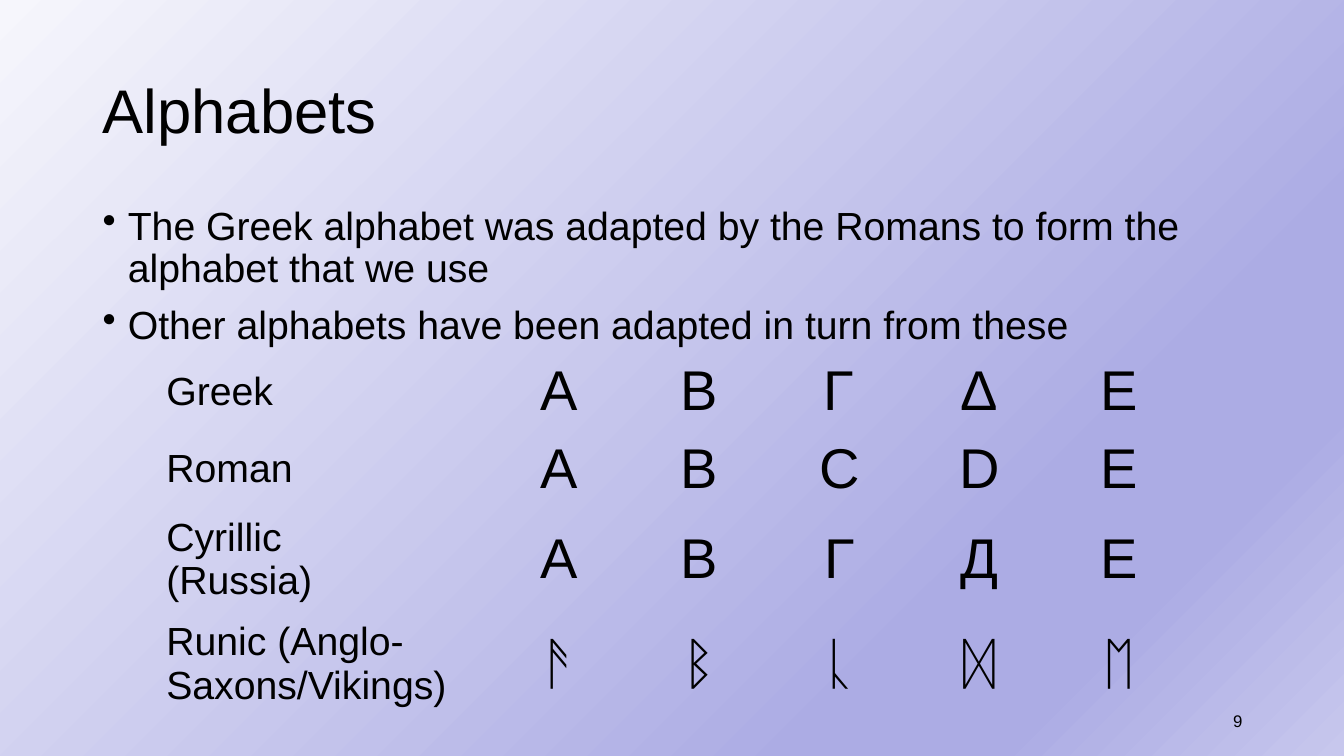
from pptx import Presentation
from pptx.dml.color import RGBColor
from pptx.enum.text import MSO_ANCHOR, PP_ALIGN
from pptx.oxml import parse_xml
from pptx.oxml.ns import nsdecls, qn
from pptx.util import Inches, Pt

MIDDLE, TOP = MSO_ANCHOR.MIDDLE, MSO_ANCHOR.TOP
LEFT, CENTER, RIGHT = PP_ALIGN.LEFT, PP_ALIGN.CENTER, PP_ALIGN.RIGHT
BLACK = RGBColor(0x00, 0x00, 0x00)
PALE = RGBColor(0xF6, 0xF6, 0xFC)
LAVENDER = RGBColor(0xAC, 0xAC, 0xE4)
LILAC = RGBColor(0xC7, 0xC7, 0xED)
BACKGROUND_STOPS = [(0, PALE), (74, LAVENDER), (83, LAVENDER), (100, LILAC)]
FONT = "Arial"
PLAIN_TABLE_STYLE = "{2D5ABB26-0587-4C30-8999-92F81FD0307C}"

POINTS = [
    "The Greek alphabet was adapted by the Romans to form the alphabet that we use",
    "Other alphabets have been adapted in turn from these",
]
ALPHABETS = [
    ("Greek", "ΑΒΓΔΕ"),
    ("Roman", "ABCDE"),
    ("Cyrillic\n(Russia)", "АВГДЕ"),
    ("Runic (Anglo-\nSaxons/Vikings)", "ᚫᛒᚳᛞᛖ"),
]


def paint_background(page):
    fill = page.background.fill
    fill.gradient()
    fill.gradient_angle = 315
    stops = next(page.element.iter(qn("a:gsLst")))
    for stop in list(stops):
        stops.remove(stop)
    for percent, color in BACKGROUND_STOPS:
        stops.append(parse_xml(
            f'<a:gs {nsdecls("a")} pos="{percent * 1000}">'
            f'<a:srgbClr val="{color}"/></a:gs>'))


def write(para, text, size, align=LEFT):
    para.text = text
    para.alignment = align
    para.font.name = FONT
    para.font.size = Pt(size)
    para.font.color.rgb = BLACK


def add_bullet(para):
    properties = para._p.get_or_add_pPr()
    properties.set("marL", str(Inches(0.25)))
    properties.set("indent", str(Inches(-0.25)))
    bullet = parse_xml(f'<a:buChar {nsdecls("a")} char="•"/>')
    properties.insert_element_before(bullet, "a:tabLst", "a:defRPr", "a:extLst")


def add_text(page, left, top, width, height, lines, size,
             anchor=MIDDLE, align=LEFT, spacing=None, bulleted=False):
    box = page.shapes.add_textbox(
        Inches(left), Inches(top), Inches(width), Inches(height))
    frame = box.text_frame
    frame.word_wrap = True
    frame.vertical_anchor = anchor
    for index, line in enumerate(lines):
        para = frame.add_paragraph() if index else frame.paragraphs[0]
        write(para, line, size, align)
        para.line_spacing = spacing
        if bulleted:
            para.space_before = Pt(10)
            add_bullet(para)


def fill_cell(cell, text, size, align):
    cell.fill.background()
    cell.vertical_anchor = MIDDLE
    write(cell.text_frame.paragraphs[0], text, size, align)


def add_alphabet_table(page):
    letter_count = len(ALPHABETS[0][1])
    frame = page.shapes.add_table(
        len(ALPHABETS), letter_count + 1,
        Inches(1.55), Inches(3.5), Inches(10.25), Inches(1.64))
    table = frame.table
    table.first_row = False
    table.horz_banding = False
    next(frame._element.iter(qn("a:tableStyleId"))).text = PLAIN_TABLE_STYLE
    for index, column in enumerate(table.columns):
        column.width = Inches(1.39 if index else 3.3)
    for row, (name, letters) in zip(table.rows, ALPHABETS):
        name_cell, *letter_cells = row.cells
        fill_cell(name_cell, name, 28, LEFT)
        for cell, letter in zip(letter_cells, letters):
            fill_cell(cell, letter, 40, CENTER)


def main():
    deck = Presentation()
    deck.slide_width, deck.slide_height = Inches(13.33), Inches(7.5)
    page = deck.slides.add_slide(deck.slide_layouts[6])
    paint_background(page)
    add_text(page, 0.92, 0.4, 11.5, 1.45, ["Alphabets"], 44, spacing=0.9)
    add_text(page, 0.92, 2, 11.5, 1.75, POINTS, 28,
             anchor=TOP, spacing=0.9, bulleted=True)
    add_alphabet_table(page)
    add_text(page, 9.42, 6.95, 3, 0.4, ["9"], 12, align=RIGHT)
    deck.save("out.pptx")


if __name__ == "__main__":
    main()
